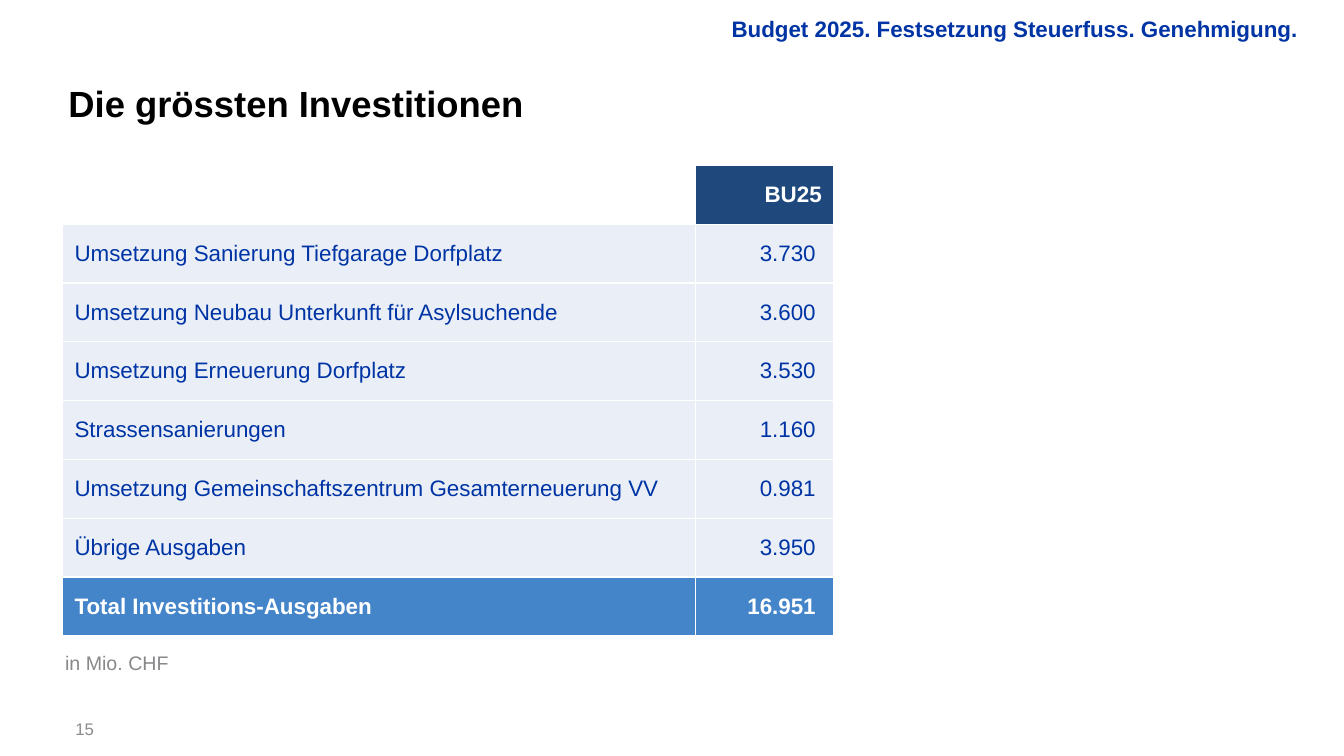
"""Build the slide on the largest investments in the 2025 budget."""
from lxml.etree import SubElement
from pptx import Presentation
from pptx.dml.color import RGBColor
from pptx.enum.text import MSO_ANCHOR, PP_ALIGN
from pptx.oxml.ns import qn
from pptx.util import Inches, Pt

COLORS = {
    "black": "000000", "white": "FFFFFF", "blue": "0034A5", "navy": "1F497D",
    "pale": "EAEFF7", "total": "4484C9", "note": "87888A", "page": "8C8C8C",
}
LEFT, RIGHT, CENTER = PP_ALIGN.LEFT, PP_ALIGN.RIGHT, PP_ALIGN.CENTER
TOP, MIDDLE, BOTTOM = MSO_ANCHOR.TOP, MSO_ANCHOR.MIDDLE, MSO_ANCHOR.BOTTOM


def write(frame, text, size, color, bold, align):
    para = frame.paragraphs[0]
    para.alignment = align
    run = para.add_run()
    run.text = text
    run.font.name = "Arial"
    run.font.size = Pt(size)
    run.font.bold = bold
    run.font.color.rgb = RGBColor.from_string(COLORS[color])
    return para


def label(box, text, size, color, bold, align, anchor, wrap=True):
    frame = slide.shapes.add_textbox(*map(Inches, box)).text_frame
    frame.word_wrap = wrap
    frame.vertical_anchor = anchor
    return write(frame, text, size, color, bold, align)


deck = Presentation()
deck.slide_width, deck.slide_height = Inches(13.33), Inches(7.5)
slide = deck.slides.add_slide(deck.slide_layouts[6])

label((0.58, 0.1, 12.39, 0.35), "Budget 2025. Festsetzung Steuerfuss. Genehmigung.",
      16, "blue", True, RIGHT, TOP)
title = label((0.58, 0.35, 12.39, 0.94), "Die grössten Investitionen",
              26, "black", True, LEFT, BOTTOM)
title.line_spacing = 0.9
label((0.54, 6.41, 1.24, 0.34), "in Mio. CHF", 14, "note", False, CENTER, TOP, False)
label((0.58, 7.11, 0.52, 0.24), "15", 12, "page", False, CENTER, MIDDLE)

rows = [
    ("", "BU25"),
    ("Umsetzung Sanierung Tiefgarage Dorfplatz", "3.730"),
    ("Umsetzung Neubau Unterkunft für Asylsuchende", "3.600"),
    ("Umsetzung Erneuerung Dorfplatz", "3.530"),
    ("Strassensanierungen", "1.160"),
    ("Umsetzung Gemeinschaftszentrum Gesamterneuerung VV", "0.981"),
    ("Übrige Ausgaben", "3.950"),
    ("Total Investitions-Ausgaben", "16.951"),
]
last = len(rows) - 1
table = slide.shapes.add_table(
    len(rows), 2, Inches(0.62), Inches(1.64), Inches(7.65), Inches(4.67)).table
table.horz_banding = False
table.columns[0].width, table.columns[1].width = Inches(6.28), Inches(1.37)

for r, row in enumerate(rows):
    for c, text in enumerate(row):
        cell = table.cell(r, c)
        cell.vertical_anchor = MIDDLE
        cell.margin_top = cell.margin_bottom = 0
        cell.margin_left = Inches(0 if c else 0.12)
        cell.margin_right = Inches((0.18 if r else 0.12) if c else 0)
        props = cell._tc.get_or_add_tcPr()
        for side in ("lnL", "lnR", "lnT", "lnB"):
            line = SubElement(props, qn(f"a:{side}"), w=str(Pt(1)))
            paint = SubElement(line, qn("a:solidFill"))
            SubElement(paint, qn("a:srgbClr"), val=COLORS["white"])
        if r == 0:
            fill = "navy" if c else "white"
        else:
            fill = "total" if r == last else "pale"
        cell.fill.solid()
        cell.fill.fore_color.rgb = RGBColor.from_string(COLORS[fill])
        strong = r in (0, last)
        if text:
            write(cell.text_frame, text, 16, "white" if strong else "blue",
                  strong, RIGHT if c else LEFT)

deck.save("out.pptx")
